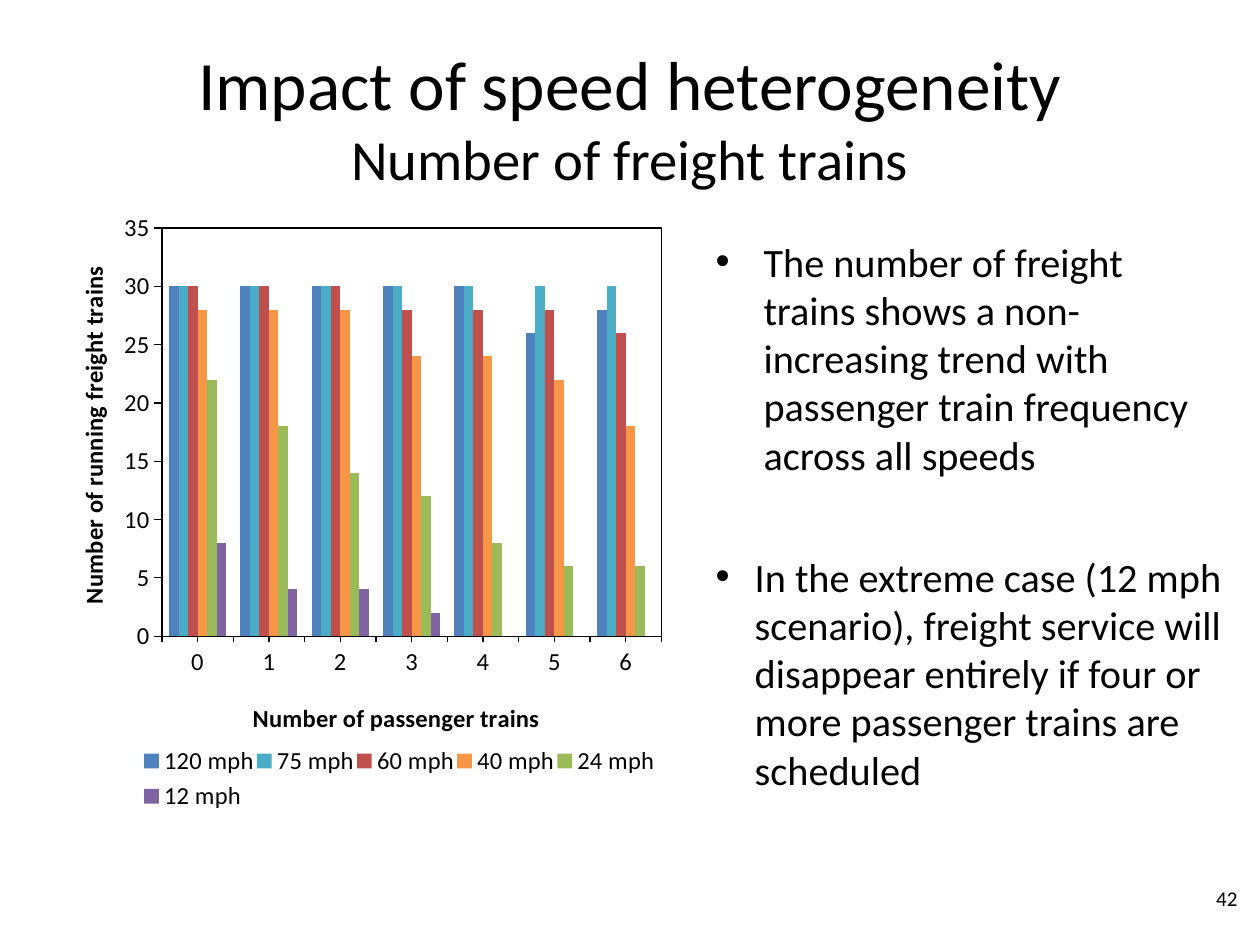
"""Build a slide on how speed heterogeneity affects the number of freight trains."""
import pptx
import pptx.chart.data
import pptx.dml.color
import pptx.enum.chart
import pptx.enum.text
import pptx.oxml
import pptx.oxml.ns
import pptx.util

RGBColor = pptx.dml.color.RGBColor
Inches, Pt = pptx.util.Inches, pptx.util.Pt
ALIGN, ANCHOR = pptx.enum.text.PP_ALIGN, pptx.enum.text.MSO_ANCHOR
TICK = pptx.enum.chart.XL_TICK_MARK
qn = pptx.oxml.ns.qn

BLACK = RGBColor(0x00, 0x00, 0x00)
FONT = "Calibri"
TITLE = [("Impact of speed heterogeneity", 39.6), ("Number of freight trains", 32.4)]
TITLE_BOX = (0.5, 0.3, 9, 1.25)
POINTS = [
    ("The number of freight trains shows a non-increasing trend with passenger "
     "train frequency across all speeds", (5.58, 1.83, 4.17, 2.25), 0.38),
    ("In the extreme case (12 mph scenario), freight service will disappear "
     "entirely if four or more passenger trains are scheduled", (5.58, 4.33, 4.25, 2.04), 0.31),
]
PAGE_NUMBER, NUMBER_BOX = "42", (8.75, 6.93, 1.17, 0.4)
CHART_BOX = (0.42, 1.58, 5, 5)
PASSENGER_TRAINS = ["0", "1", "2", "3", "4", "5", "6"]
FREIGHT_TRAINS = [
    ("120 mph", (30, 30, 30, 30, 30, 26, 28), RGBColor(0x4F, 0x81, 0xBD)),
    ("75 mph", (30, 30, 30, 30, 30, 30, 30), RGBColor(0x4B, 0xAC, 0xC6)),
    ("60 mph", (30, 30, 30, 28, 28, 28, 26), RGBColor(0xC0, 0x50, 0x4D)),
    ("40 mph", (28, 28, 28, 24, 24, 22, 18), RGBColor(0xF7, 0x96, 0x46)),
    ("24 mph", (22, 18, 14, 12, 8, 6, 6), RGBColor(0x9B, 0xBB, 0x59)),
    ("12 mph", (8, 4, 4, 2, 0, 0, 0), RGBColor(0x80, 0x64, 0xA2)),
]
CATEGORY_FORMAT = {"major_tick_mark": TICK.NONE, "minor_tick_mark": TICK.OUTSIDE,
                   "has_major_gridlines": False}
VALUE_FORMAT = {"minimum_scale": 0, "maximum_scale": 35, "major_unit": 5,
                "major_tick_mark": TICK.OUTSIDE, "has_major_gridlines": False}


def apply(target, **values):
    for name, value in values.items():
        setattr(target, name, value)


def style(font, size, **extra):
    apply(font, name=FONT, size=Pt(size), **extra)
    font.color.rgb = BLACK


def place(shape, box):
    apply(shape, **dict(zip(("left", "top", "width", "height"), map(Inches, box))))


def prepare(frame, anchor):
    apply(frame, word_wrap=True, vertical_anchor=anchor,
          auto_size=pptx.enum.text.MSO_AUTO_SIZE.NONE)
    return frame.paragraphs[0]


def set_layout(element, index, shares, inner=False):
    for old in element.findall(qn("c:layout")):
        element.remove(old)
    target = '<c:layoutTarget val="inner"/>' if inner else ""
    modes = '<c:xMode val="edge"/><c:yMode val="edge"/>'
    values = "".join(f'<c:{key} val="{share}"/>' for key, share in zip("xywh", shares))
    element.insert(index, pptx.oxml.parse_xml(
        f'<c:layout {pptx.oxml.ns.nsdecls("c")}><c:manualLayout>'
        f"{target}{modes}{values}</c:manualLayout></c:layout>"))


def add_title(page):
    place(page.shapes.title, TITLE_BOX)
    para = prepare(page.shapes.title.text_frame, ANCHOR.MIDDLE)
    para.alignment = ALIGN.CENTER
    for index, (text, size) in enumerate(TITLE):
        if index:
            para.add_line_break()
        span = para.add_run()
        span.text = text
        style(span.font, size)


def add_point(box, text, position, indent):
    place(box, position)
    para = prepare(box.text_frame, ANCHOR.TOP)
    para.space_before = Pt(0)
    properties = para._p.get_or_add_pPr()
    properties.set("marL", str(Inches(indent)))
    properties.set("indent", str(-Inches(indent)))
    bullet = properties.makeelement(qn("a:buChar"), {"char": "•"})
    properties.append(bullet)
    span = para.add_run()
    span.text = text
    style(span.font, 23)


def add_number(page):
    box = page.shapes.add_textbox(*map(Inches, NUMBER_BOX))
    para = prepare(box.text_frame, ANCHOR.MIDDLE)
    apply(para, text=PAGE_NUMBER, alignment=ALIGN.RIGHT)
    style(para.runs[0].font, 12)


def format_axis(axis, title, shares, values):
    apply(axis, **values)
    apply(axis.format.line, width=Pt(0.75))
    axis.format.line.color.rgb = BLACK
    style(axis.tick_labels.font, 14)
    para = axis.axis_title.text_frame.paragraphs[0]
    para.text = title
    style(para.runs[0].font, 14, bold=True)
    set_layout(axis.axis_title._element, 1, shares)


def add_chart(page):
    data = pptx.chart.data.CategoryChartData(number_format="#,##0")
    data.categories = PASSENGER_TRAINS
    for name, values, _ in FREIGHT_TRAINS:
        data.add_series(name, values)
    chart = page.shapes.add_chart(pptx.enum.chart.XL_CHART_TYPE.COLUMN_CLUSTERED,
                                  *map(Inches, CHART_BOX), data).chart
    apply(chart, has_title=False, has_legend=True)
    style(chart.font, 14)
    apply(chart.plots[0], gap_width=150, overlap=0, vary_by_categories=False)
    for series, (_, _, color) in zip(chart.plots[0].series, FREIGHT_TRAINS):
        series.format.fill.solid()
        series.format.fill.fore_color.rgb = color
    format_axis(chart.category_axis, "Number of passenger trains", (0.31, 0.79), CATEGORY_FORMAT)
    format_axis(chart.value_axis, "Number of running freight trains", (0.03, 0.1), VALUE_FORMAT)
    apply(chart.legend, position=pptx.enum.chart.XL_LEGEND_POSITION.BOTTOM,
          include_in_layout=False)
    style(chart.legend.font, 14)
    set_layout(chart.legend._element, 1, (0.14, 0.86, 0.82, 0.12))
    plot_area = chart._chartSpace.chart.plotArea
    set_layout(plot_area, 0, (0.173, 0.046, 0.793, 0.648), inner=True)
    plot_area.append(pptx.oxml.parse_xml(
        f'<c:spPr {pptx.oxml.ns.nsdecls("c", "a")}><a:noFill/><a:ln w="{Pt(0.75)}">'
        f'<a:solidFill><a:srgbClr val="{BLACK}"/></a:solidFill></a:ln></c:spPr>'))


def main():
    deck = pptx.Presentation()
    apply(deck, slide_width=Inches(10), slide_height=Inches(7.5))
    page = deck.slides.add_slide(deck.slide_layouts.get_by_name("Two Content"))
    add_title(page)
    for index, point in enumerate(POINTS, start=1):
        add_point(page.placeholders[index], *point)
    add_chart(page)
    add_number(page)
    deck.save("out.pptx")


if __name__ == "__main__":
    main()
